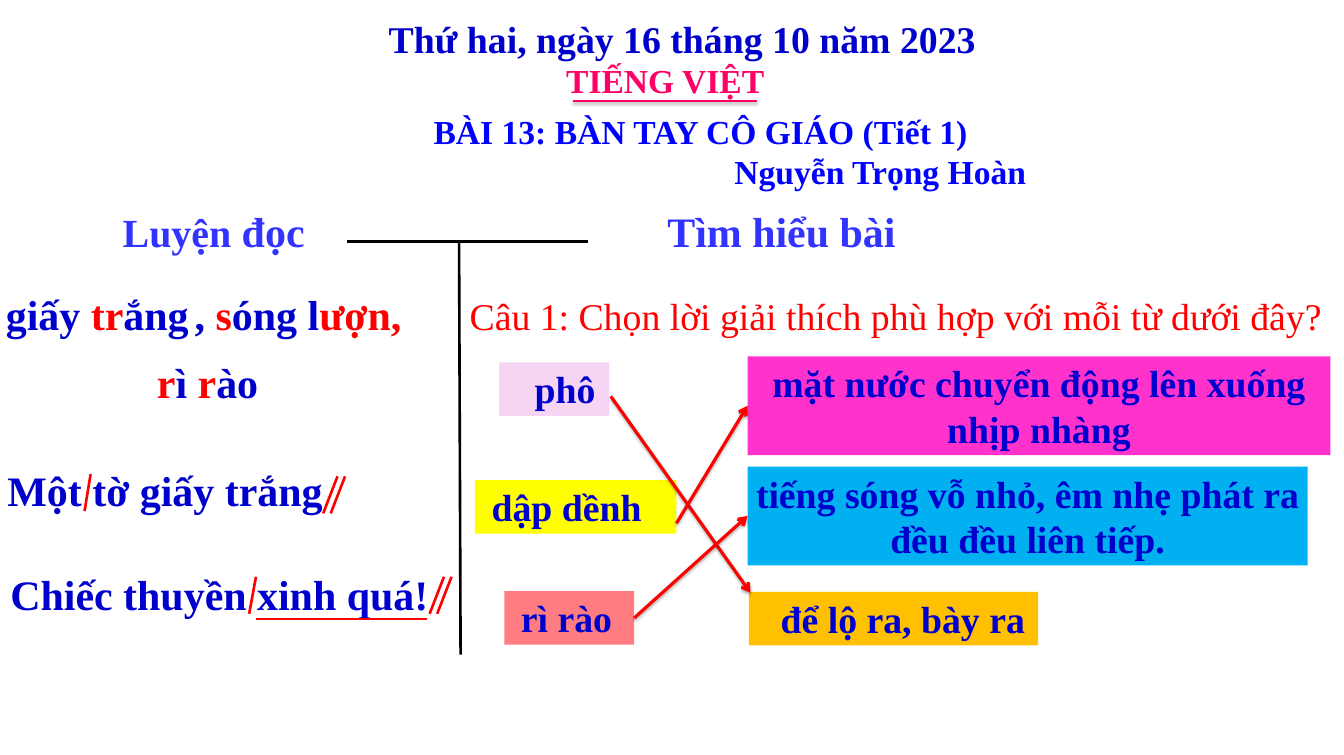
from lxml import etree
from pptx import Presentation
from pptx.dml.color import RGBColor
from pptx.enum.shapes import MSO_CONNECTOR, MSO_SHAPE
from pptx.enum.text import MSO_ANCHOR, MSO_AUTO_SIZE, PP_ALIGN
from pptx.oxml.ns import qn
from pptx.util import Inches, Pt

FONT = "Times New Roman"
NAVY = RGBColor(0x00, 0x00, 0xCC)
BLUE = RGBColor(0x00, 0x00, 0xFF)
VIOLET = RGBColor(0x33, 0x33, 0xFF)
ROSE = RGBColor(0xFF, 0x00, 0x66)
RED = RGBColor(0xFF, 0x00, 0x00)
BLACK = RGBColor(0x00, 0x00, 0x00)
LILAC = RGBColor(0xF6, 0xD4, 0xF4)
YELLOW = RGBColor(0xFF, 0xFF, 0x00)
SALMON = RGBColor(0xFF, 0x7C, 0x80)
MAGENTA = RGBColor(0xFF, 0x33, 0xCC)
SKY = RGBColor(0x00, 0xB0, 0xF0)
AMBER = RGBColor(0xFF, 0xC0, 0x00)
LEFT, CENTER = PP_ALIGN.LEFT, PP_ALIGN.CENTER
RECTANGLE, STRAIGHT = MSO_SHAPE.RECTANGLE, MSO_CONNECTOR.STRAIGHT
TOP = MSO_ANCHOR.TOP
GROW = MSO_AUTO_SIZE.SHAPE_TO_FIT_TEXT
LEFT_SIDE, RIGHT_SIDE = 1, 3


def write_runs(paragraph, runs, size, bold=True, align=LEFT):
    paragraph.alignment = align
    for text, color in runs:
        run = paragraph.add_run()
        run.text = text
        run.font.name = FONT
        run.font.size = Pt(size)
        run.font.bold = bold
        run.font.color.rgb = color


def fit_frame(shape, inset=0.1):
    frame = shape.text_frame
    frame.word_wrap = True
    frame.auto_size = GROW
    frame.vertical_anchor = TOP
    frame.margin_left = Inches(inset)
    return frame


def add_text(slide, box, runs, size, bold=True, align=LEFT, inset=0.1):
    shape = slide.shapes.add_textbox(*map(Inches, box))
    frame = fit_frame(shape, inset)
    write_runs(frame.paragraphs[0], runs, size, bold, align)
    return shape


def add_card(slide, box, text, fill, align=LEFT, inset=0.1):
    shape = slide.shapes.add_shape(RECTANGLE, *map(Inches, box))
    shape.shadow.inherit = False
    shape.fill.solid()
    shape.fill.fore_color.rgb = fill
    shape.line.fill.background()
    frame = fit_frame(shape, inset)
    write_runs(frame.paragraphs[0], [(text, NAVY)], 36, align=align)
    return shape


def add_line(slide, start, end, color, width=2.5, shadow=False):
    line = slide.shapes.add_connector(STRAIGHT, *map(Inches, (*start, *end)))
    line.line.color.rgb = color
    line.line.width = Pt(width)
    effects = etree.SubElement(line._element.spPr, qn("a:effectLst"))
    if shadow:
        outer = etree.SubElement(effects, qn("a:outerShdw"), blurRad=str(Pt(3.1)),
                                 dist=str(Pt(1.8)), dir="5400000", rotWithShape="0")
        tint = etree.SubElement(outer, qn("a:srgbClr"), val="000000")
        etree.SubElement(tint, qn("a:alpha"), val="35000")
    return line


def add_arrow(slide, start, end):
    arrow = add_line(slide, start, end, RED, 3, shadow=True)
    etree.SubElement(arrow.line._get_or_add_ln(), qn("a:tailEnd"), type="arrow")
    return arrow


def add_slashes(slide, left, top, count, lean):
    for index in range(count):
        foot = left + 0.1 * index
        add_line(slide, (foot + lean, top), (foot, top + 0.49), RED)


def add_heading(slide, left, top):
    date = add_text(slide, (left + 0.73, top, 8.05, 0.71),
                    [("Thứ hai, ngày 16 tháng 10 năm 2023", NAVY)], 36)
    subject = add_text(slide, (left + 3.08, top + 0.59, 2.85, 0.64),
                       [("TIẾNG VIỆT", ROSE)], 32)
    for shape in (date, subject):
        shape.text_frame.word_wrap = False
    rule = top + 1.18
    add_line(slide, (left + 3.27, rule), (left + 5.71, rule), ROSE, 2, shadow=True)
    lesson = add_text(slide, (left, top + 1.23, 9.92, 1.24),
                      [("BÀI 13: BÀN TAY CÔ GIÁO (Tiết 1)", BLUE)], 32,
                      align=CENTER, inset=0.16)
    frame = lesson.text_frame
    frame.margin_right = Inches(0.16)
    frame.margin_top = frame.margin_bottom = Inches(0.08)
    author = frame.add_paragraph()
    author._p.get_or_add_pPr().set("marL", str(Inches(4.76)))
    write_runs(author, [("Nguyễn Trọng Hoàn", BLUE)], 32, align=CENTER)


def add_columns(slide, left, top):
    add_line(slide, (left + 1.48, top), (left + 1.5, top + 5.47), BLACK)
    add_line(slide, (left, top), (left + 3.19, top), BLACK)
    reading = add_text(slide, (left - 3.7, top - 0.52, 3.86, 0.77),
                       [("Luyện", VIOLET), (" đọc", VIOLET)], 40, align=CENTER)
    reading.text_frame.paragraphs[0].runs[0].font.size = Pt(38)
    add_text(slide, (left + 4.05, top - 0.53, 3.4, 0.77),
             [("Tìm hiểu bài", VIOLET)], 40, align=CENTER)


def add_reading(slide, left, top):
    add_text(slide, (left - 0.02, top, 3.02, 0.77),
             [("giấy ", NAVY), ("tr", RED), ("ắng", NAVY)], 40)
    add_text(slide, (left + 2.48, top, 3.2, 0.77),
             [(", ", NAVY), ("s", RED), ("óng l", NAVY), ("ượn,", RED)], 40)
    add_text(slide, (left + 1.98, top + 0.9, 1.92, 0.77),
             [("r", RED), ("ì ", NAVY), ("r", RED), ("ào", NAVY)], 40)

    add_text(slide, (left, top + 2.34, 6.64, 0.77), [("Một tờ giấy trắng", NAVY)], 40)
    add_slashes(slide, left + 1.12, top + 2.51, 1, 0.08)
    add_slashes(slide, left + 4.28, top + 2.54, 2, 0.19)

    add_text(slide, (left + 0.04, top + 3.71, 6.64, 0.77),
             [("Chiếc thuyền xinh quá!", NAVY)], 40)
    add_slashes(slide, left + 3.3, top + 3.87, 1, 0.09)
    add_slashes(slide, left + 5.69, top + 3.87, 2, 0.19)
    underline = top + 4.43
    add_line(slide, (left + 3.39, underline), (left + 5.65, underline), RED)


def add_matching(slide, left, top):
    add_text(slide, (left, top, 11.81, 0.71),
             [("Câu 1: Chọn lời giải thích phù hợp với mỗi từ dưới đây?", RED)],
             36, bold=False, inset=0.22)
    add_card(slide, (left + 0.61, top + 0.97, 1.46, 0.71), "phô", LILAC, inset=0.47)
    add_card(slide, (left + 0.29, top + 2.53, 2.67, 0.71), "dập dềnh", YELLOW, inset=0.22)
    murmur = add_card(slide, (left + 0.68, top + 4, 1.72, 0.71), "rì rào", SALMON,
                      inset=0.22)
    waves = add_card(slide, (left + 3.9, top + 0.89, 7.72, 1.31),
                     "mặt nước chuyển động lên xuống nhịp nhàng", MAGENTA, CENTER)
    sound = add_card(slide, (left + 3.9, top + 2.35, 7.42, 1.31),
                     "tiếng sóng vỗ nhỏ, êm nhẹ phát ra đều đều liên tiếp.", SKY, CENTER)
    add_card(slide, (left + 3.92, top + 4.01, 3.83, 0.71), "để lộ ra, bày ra", AMBER,
             inset=0.42)

    add_arrow(slide, (left + 2.09, top + 1.42), (left + 3.94, top + 4.02))
    to_waves = add_arrow(slide, (left + 2.96, top + 3.1), (left + 3.9, top + 1.55))
    to_waves.end_connect(waves, LEFT_SIDE)
    to_sound = add_arrow(slide, (left + 2.4, top + 4.36), (left + 3.9, top + 3.01))
    to_sound.begin_connect(murmur, RIGHT_SIDE)
    to_sound.end_connect(sound, LEFT_SIDE)


def main():
    presentation = Presentation()
    presentation.slide_width = Inches(17.8)
    presentation.slide_height = Inches(10)
    slide = presentation.slides.add_slide(presentation.slide_layouts[6])
    add_heading(slide, 4.32, 0.16)
    add_columns(slide, 4.6, 3.2)
    add_reading(slide, 0, 3.77)
    add_matching(slide, 6, 3.83)
    presentation.save("out.pptx")


if __name__ == "__main__":
    main()
